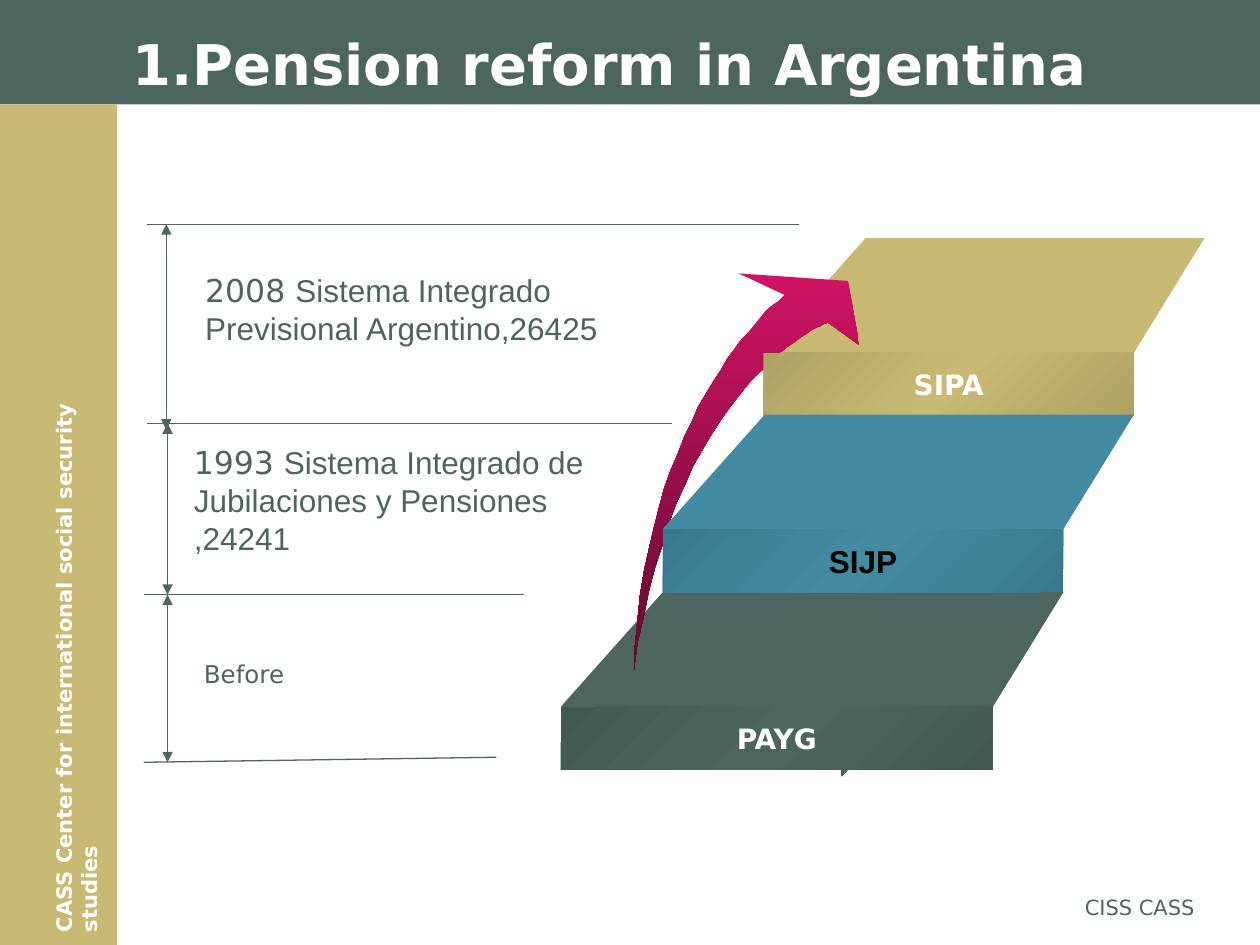
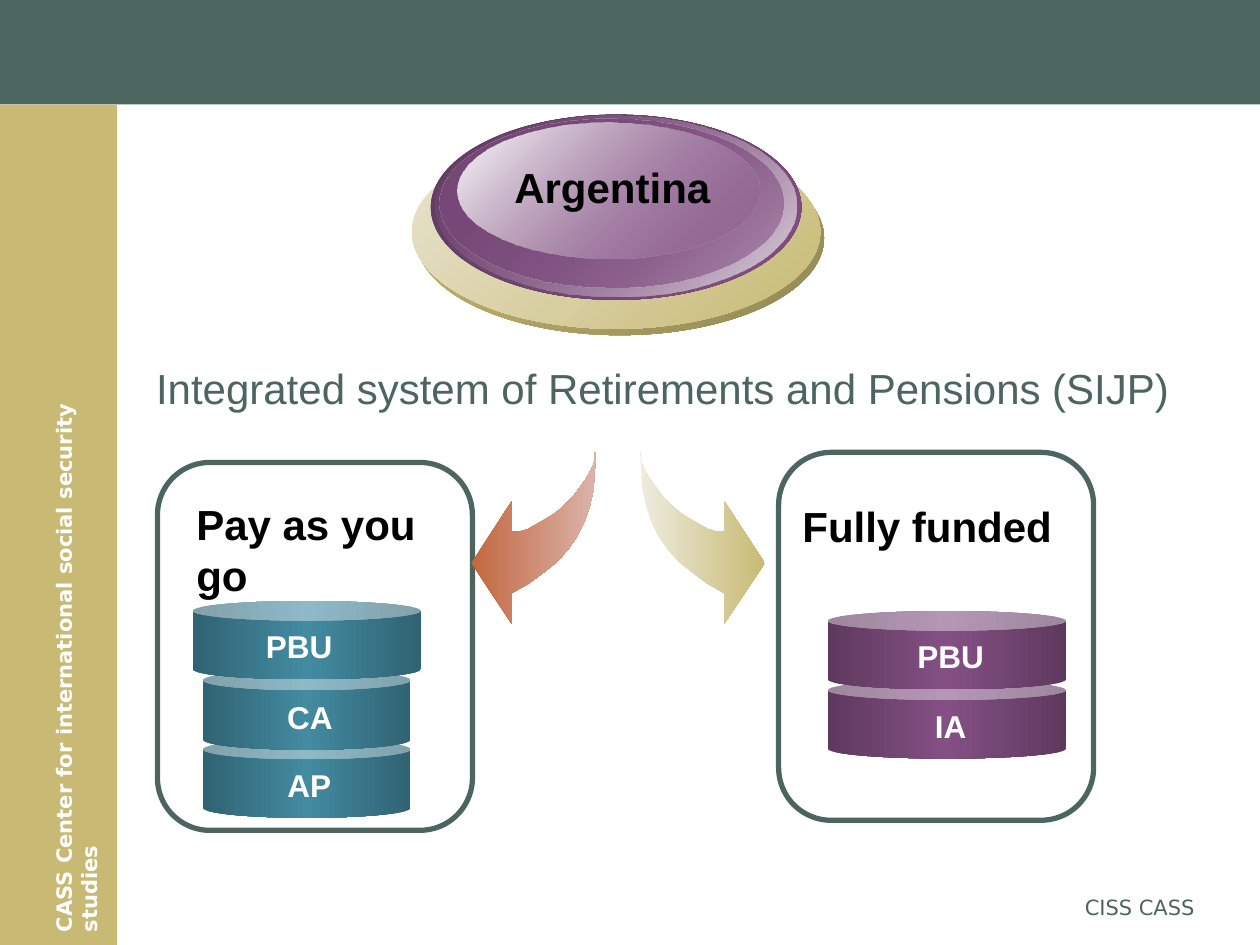
"""Build two slides on the Argentine pension reform."""
from dataclasses import dataclass
from typing import Optional

from lxml.etree import SubElement
from pptx import Presentation
from pptx.dml.color import RGBColor
from pptx.enum.shapes import MSO_CONNECTOR, MSO_SHAPE
from pptx.enum.text import MSO_ANCHOR, MSO_AUTO_SIZE, PP_ALIGN
from pptx.oxml.ns import qn
from pptx.util import Pt

PX = 9144
COLORS = {
    "green": "4C665F", "green shade": "425953", "green side": "364944",
    "gold": "C8BA74", "gold shade": "AEA265", "gold side": "8F8553",
    "gold dark": "928855", "gold pale": "E9E4D0", "gold faint": "EFECDF",
    "blue": "438BA1", "blue shade": "3A798C", "blue side": "306373",
    "purple": "845084", "purple mid": "774877", "purple dark": "5E395E", "purple pale": "DED7DE",
    "pink": "D11364", "wine": "61092E", "rust": "C26840", "rust pale": "DBB3AA",
    "white": "FFFFFF", "black": "000000",
}
SANS, ARIAL = "DejaVu Sans", "Arial"
STYLES = {
    "title": {"name": SANS, "size": Pt(32), "bold": True},
    "side": {"name": SANS, "size": Pt(12), "bold": True},
    "footer": {"name": SANS, "size": Pt(12), "bold": False},
    "year": {"name": SANS, "size": Pt(18), "bold": False},
    "law": {"name": ARIAL, "size": Pt(18), "bold": False},
    "before": {"name": SANS, "size": Pt(14), "bold": False},
    "step": {"name": SANS, "size": Pt(16), "bold": True},
    "part": {"name": ARIAL, "size": Pt(18), "bold": True},
    "heading": {"name": ARIAL, "size": Pt(24), "bold": True},
    "system": {"name": ARIAL, "size": Pt(24), "bold": False},
}
Box = tuple[int, int, int, int]
Point = tuple[int, int]


@dataclass
class Gradient:
    """A linear gradient; each stop is position, colour, opacity."""
    stops: list[tuple[int, str, int]]
    angle: int = 0


@dataclass
class Label:
    """A text box with runs of text and style."""
    box: Box
    runs: list[tuple[str, str]]
    color: str = "green"
    align: PP_ALIGN = PP_ALIGN.LEFT
    anchor: MSO_ANCHOR = MSO_ANCHOR.TOP
    wrap: bool = True
    grow: bool = True
    rotation: int = 0


@dataclass
class Rule:
    """A thin line, with or without arrowheads."""
    start: Point
    end: Point
    arrows: bool = False


@dataclass
class Step:
    """One step of the staircase."""
    name: str
    hue: str
    left: int
    right: int
    front_y: int
    side: Point
    style: str = "step"
    text_color: str = "white"


@dataclass
class Can:
    """One labelled can of a stack."""
    name: str
    box: Box
    label: Box


def rgb(name: str) -> RGBColor:
    """Look up a colour by name."""
    return RGBColor.from_string(COLORS[name])


def scaled(box: Box) -> list[int]:
    """Turn px into EMU."""
    return [value * PX for value in box]


def two_tone(start: str, end: str, angle: int = 0, start_alpha: int = 100, end_alpha: int = 100) -> Gradient:
    """Make a gradient from one colour to another."""
    return Gradient([(0, start, start_alpha), (100, end, end_alpha)], angle)


def sheen(edge: str, middle: str, angle: int) -> Gradient:
    """Make a gradient that is brightest in the middle."""
    return Gradient([(0, edge, 100), (50, middle, 100), (100, edge, 100)], angle)


def paint(shape, fill: str | Gradient | None) -> None:
    """Fill a shape and take away its line and shadow."""
    shape.shadow.inherit = False
    shape.line.fill.background()
    if fill is None:
        shape.fill.background()
    elif isinstance(fill, str):
        shape.fill.solid()
        shape.fill.fore_color.rgb = rgb(fill)
    else:
        shape.fill.gradient()
        element = shape._element.spPr.find(qn("a:gradFill"))
        for child in list(element):
            element.remove(child)
        stop_list = SubElement(element, qn("a:gsLst"))
        for position, color, alpha in fill.stops:
            stop = SubElement(stop_list, qn("a:gs"), pos=str(position * 1000))
            value = SubElement(stop, qn("a:srgbClr"), val=COLORS[color])
            if alpha < 100:
                SubElement(value, qn("a:alpha"), val=str(alpha * 1000))
        SubElement(element, qn("a:lin"), ang=str(fill.angle * 60000), scaled="1")


def write(text_frame, runs: list[tuple[str, str]], color: str, align: PP_ALIGN, **frame) -> None:
    """Write one paragraph of styled runs."""
    for key, value in frame.items():
        setattr(text_frame, key, value)
    paragraph = text_frame.paragraphs[0]
    paragraph.alignment = align
    for text, style in runs:
        run = paragraph.add_run()
        run.text = text
        for key, value in STYLES[style].items():
            setattr(run.font, key, value)
        run.font.color.rgb = rgb(color)


def add_label(slide, label: Label) -> None:
    """Add a text box."""
    shape = slide.shapes.add_textbox(*scaled(label.box))
    shape.rotation = label.rotation
    size = MSO_AUTO_SIZE.SHAPE_TO_FIT_TEXT if label.grow else MSO_AUTO_SIZE.NONE
    write(shape.text_frame, label.runs, label.color, label.align,
          word_wrap=label.wrap, vertical_anchor=label.anchor, auto_size=size)


def add_preset(slide, kind: MSO_SHAPE, box: Box, fill: str | Gradient | None):
    """Add a painted preset shape."""
    shape = slide.shapes.add_shape(kind, *scaled(box))
    paint(shape, fill)
    return shape


def add_outline(slide, points: list[Point], fill: str | Gradient) -> None:
    """Add a closed, painted polygon."""
    builder = slide.shapes.build_freeform(*points[0], scale=PX)
    builder.add_line_segments(points[1:], close=True)
    paint(builder.convert_to_shape(), fill)


def add_rule(slide, rule: Rule) -> None:
    """Add a thin green line."""
    connector = slide.shapes.add_connector(MSO_CONNECTOR.STRAIGHT, *scaled(rule.start + rule.end))
    connector.line.color.rgb = rgb("green")
    connector.line.width = Pt(0.75)
    if rule.arrows:
        for end in ("a:headEnd", "a:tailEnd"):
            SubElement(connector.line._get_or_add_ln(), qn(end), type="triangle")
    SubElement(connector._element.spPr, qn("a:effectLst"))


def curve(start: Point, pull_start: Point, pull_end: Point, end: Point, count: int = 30) -> list[Point]:
    """Sample a cubic curve."""
    points = []
    for index in range(count + 1):
        t = index / count
        weights = ((1 - t) ** 3, 3 * t * (1 - t) ** 2, 3 * t * t * (1 - t), t ** 3)
        corners = (start, pull_start, pull_end, end)
        points.append(tuple(round(sum(w * c[axis] for w, c in zip(weights, corners))) for axis in (0, 1)))
    return points


def add_step_top(slide, step: Step) -> None:
    """Add the slanted upper face of a step."""
    y = step.front_y
    add_outline(slide, [(step.right, y), (step.left, y), (step.left + 81, y - 91), (step.right + 56, y - 91)], step.hue)


def add_step_side(slide, step: Step) -> None:
    """Add the shaded side of a step."""
    x, y = step.side
    points = [(x, y + 25), (x - 62, y + 92), (x - 62, y + 60), (x, y)]
    add_outline(slide, points, sheen(f"{step.hue} side", step.hue, 45))


def add_step_front(slide, step: Step) -> None:
    """Add the named front face of a step."""
    box = (step.left, step.front_y, step.right - step.left, 50)
    shape = add_preset(slide, MSO_SHAPE.RECTANGLE, box, sheen(f"{step.hue} shade", step.hue, 45))
    write(shape.text_frame, [(step.name, step.style)], step.text_color, PP_ALIGN.CENTER,
          word_wrap=False, vertical_anchor=MSO_ANCHOR.MIDDLE)


def add_cans(slide, cans: list[Can], edge: str, middle: str) -> None:
    """Add a stack of cans, then their names."""
    for can in cans:
        add_preset(slide, MSO_SHAPE.CAN, can.box, sheen(edge, middle, 0))
    for can in cans:
        add_label(slide, Label(can.label, [(can.name, "part")], "white", PP_ALIGN.CENTER, wrap=False))


def add_panel(slide, left: int, top: int) -> None:
    """Add a rounded green frame."""
    shape = add_preset(slide, MSO_SHAPE.ROUNDED_RECTANGLE, (left, top, 250, 292), None)
    shape.line.color.rgb = rgb("green")
    shape.line.width = Pt(3)


def add_slide(presentation, title: Optional[str] = None):
    """Add a slide with the shared bands, footer and optional title."""
    slide = presentation.slides.add_slide(presentation.slide_layouts[5 if title else 6])
    add_preset(slide, MSO_SHAPE.RECTANGLE, (0, 0, 1000, 83), "green")
    add_preset(slide, MSO_SHAPE.RECTANGLE, (0, 83, 93, 667), "gold")
    add_label(slide, Label((-204, 480, 509, 30), [("CASS Center for international social security studies", "side")],
                           "white", rotation=270))
    add_label(slide, Label((683, 705, 275, 35), [("CISS CASS", "footer")], align=PP_ALIGN.RIGHT, grow=False))
    if title:
        shape = slide.shapes.title
        for key, value in zip(("left", "top", "width", "height"), scaled((95, 19, 808, 62))):
            setattr(shape, key, value)
        write(shape.text_frame, [(title, "title")], "white", PP_ALIGN.LEFT,
              word_wrap=True, vertical_anchor=MSO_ANCHOR.MIDDLE, auto_size=MSO_AUTO_SIZE.NONE)
        slide.shapes._spTree.append(shape._element)
    return slide


def build_reform(presentation) -> None:
    """Build the staircase of reforms."""
    slide = add_slide(presentation, "1.Pension reform in Argentina")
    sipa = Step("SIPA", "gold", 606, 900, 280, (854, 341))
    sijp = Step("SIJP", "blue", 526, 844, 420, (793, 432), "part", "black")
    payg = Step("PAYG", "green", 445, 788, 561, (730, 524))
    for step in (sipa, sijp, payg):
        add_step_side(slide, step)
    for rule in (
        Rule((416, 472), (114, 472)), Rule((394, 601), (114, 605)),
        Rule((533, 336), (117, 336)), Rule((634, 178), (117, 178)),
        Rule((132, 178), (132, 341), True), Rule((133, 336), (133, 472), True), Rule((133, 472), (133, 605), True),
    ):
        add_rule(slide, rule)
    for label in (
        Label((153, 210, 402, 70), [("2008 ", "year"), ("Sistema Integrado Previsional Argentino,26425", "law")]),
        Label((144, 347, 357, 100),
              [("1993 ", "year"), ("Sistema Integrado de Jubilaciones y Pensiones ,24241", "law")]),
        Label((152, 518, 84, 33), [("Before", "before")], wrap=False),
    ):
        add_label(slide, label)
    add_step_top(slide, sipa)
    add_step_top(slide, payg)
    outer = curve((503, 533), (511, 318), (623, 234), (623, 234))
    inner = curve((657, 256), (657, 256), (535, 300), (503, 533))
    add_outline(slide, outer + [(586, 217), (673, 223), (682, 274)] + inner[:-1], two_tone("pink", "wine", 90))
    add_step_front(slide, sipa)
    add_step_top(slide, sijp)
    add_step_front(slide, sijp)
    add_step_front(slide, payg)


def build_system(presentation) -> None:
    """Build the two pillars of the integrated system."""
    slide = add_slide(presentation)
    add_panel(slide, 125, 367)
    add_label(slide, Label((146, 391, 223, 130), [("Pay as you go", "heading")], "black"))
    arrow = [(473, 359), (472, 375), (471, 389), (468, 402), (464, 414), (458, 426), (451, 436), (442, 446),
             (432, 454), (420, 463), (406, 471), (406, 495), (374, 447), (406, 398), (406, 422), (412, 422),
             (419, 420), (426, 416), (433, 412), (441, 407), (448, 401), (454, 395), (460, 387), (465, 380),
             (469, 373), (472, 366), (472, 359)]
    add_outline(slide, arrow, two_tone("rust", "rust pale"))
    add_outline(slide, [(981 - x, y) for x, y in arrow], two_tone("gold faint", "gold"))
    for box, fill in (
        ((330, 112, 324, 154), two_tone("gold", "gold dark", 45)),
        ((327, 107, 324, 154), two_tone("gold pale", "gold", 45)),
        ((342, 91, 294, 147), two_tone("purple dark", "purple", 45)),
        ((346, 92, 286, 143), two_tone("purple", "purple pale", 45, start_alpha=0)),
        ((349, 94, 273, 134), two_tone("purple mid", "purple", 45, end_alpha=48)),
        ((363, 97, 240, 108), two_tone("white", "purple", 45, end_alpha=38)),
    ):
        add_preset(slide, MSO_SHAPE.OVAL, box, fill)
    add_label(slide, Label((398, 123, 176, 50), [("Argentina", "heading")], "black", PP_ALIGN.CENTER))
    add_label(slide, Label((627, 392, 223, 90), [("Fully funded", "heading")], "black"))
    add_label(slide, Label((114, 283, 825, 50), [("Integrated system of Retirements and Pensions (SIJP)", "system")],
                           anchor=MSO_ANCHOR.MIDDLE))
    add_cans(slide, [Can("IA", (657, 540, 189, 62), (732, 556, 45, 40)),
                     Can("PBU", (657, 485, 189, 62), (718, 501, 73, 40))], "purple dark", "purple")
    add_panel(slide, 618, 359)
    add_cans(slide, [Can("AP", (161, 587, 165, 62), (218, 603, 55, 40)),
                     Can("CA", (161, 532, 165, 63), (218, 549, 56, 40)),
                     Can("PBU", (153, 477, 181, 62), (201, 493, 73, 40))], "blue side", "blue")


def main() -> None:
    """Build and save the presentation."""
    presentation = Presentation()
    presentation.slide_width, presentation.slide_height = scaled((1000, 750))
    build_reform(presentation)
    build_system(presentation)
    presentation.save("out.pptx")


if __name__ == "__main__":
    main()
